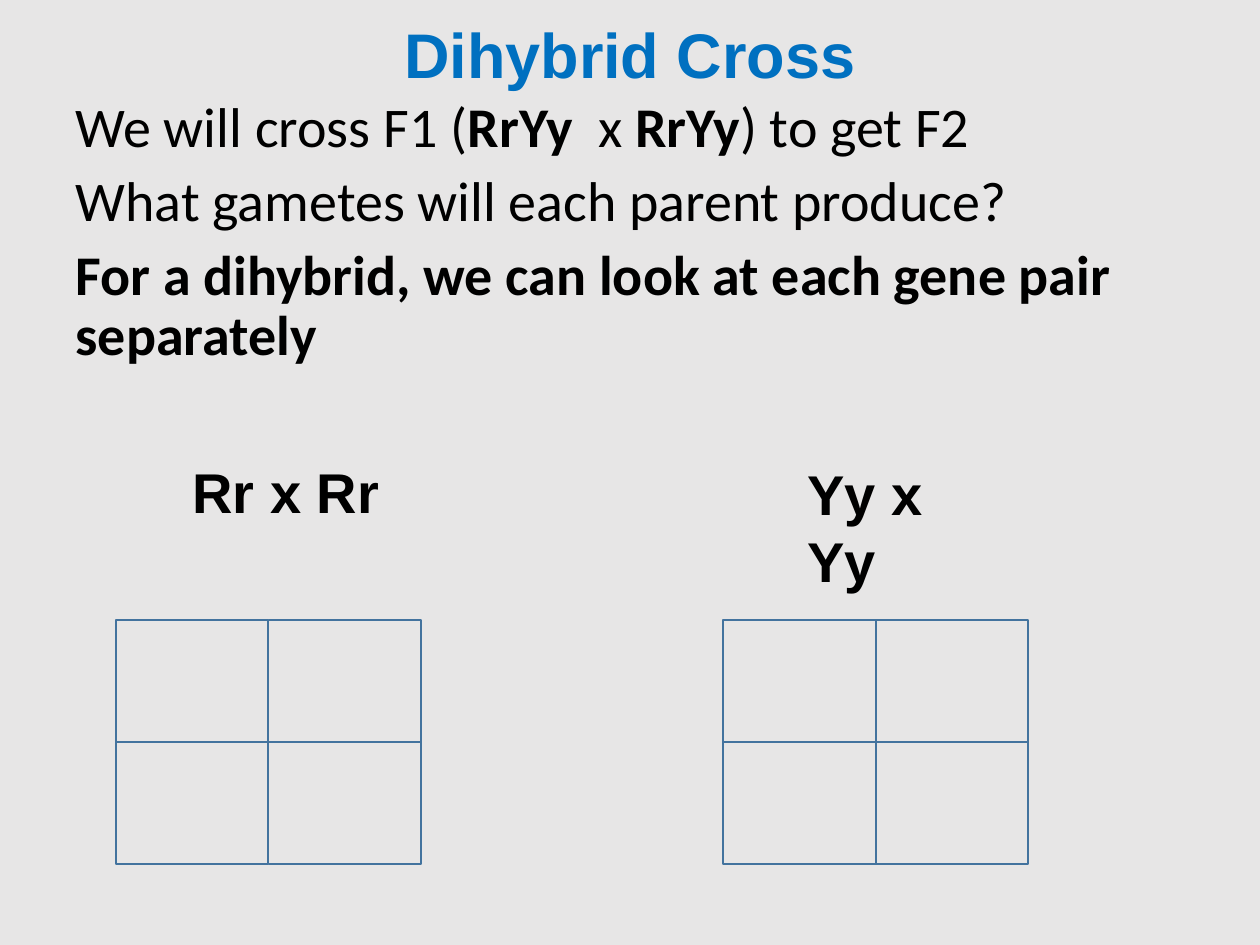
"""Build a slide that splits a dihybrid cross into two Punnett squares."""
import pptx
import pptx.dml.color
import pptx.enum.shapes
import pptx.enum.text
import pptx.oxml
import pptx.util

Inches = pptx.util.Inches
Pt = pptx.util.Pt
RGB = pptx.dml.color.RGBColor.from_string
COLORS = {"back": "E7E6E6", "text": "000000", "title": "0070C0", "grid": "43739E"}


def write(para, text, font="Arial", size=32, bold=True, color="text"):
    run = para.add_run()
    run.text = text
    run.font.name = font
    run.font.size = Pt(size)
    run.font.bold = bold
    run.font.color.rgb = RGB(COLORS[color])


def place(shape, left, top, width, height):
    shape.left, shape.top = Inches(left), Inches(top)
    shape.width, shape.height = Inches(width), Inches(height)
    frame = shape.text_frame
    frame.word_wrap = True
    frame.auto_size = pptx.enum.text.MSO_AUTO_SIZE.NONE
    frame.vertical_anchor = pptx.enum.text.MSO_ANCHOR.TOP
    return frame


deck = pptx.Presentation()
deck.slide_width, deck.slide_height = Inches(10), Inches(7.5)
slide = deck.slides.add_slide(deck.slide_layouts[1])
slide.background.fill.solid()
slide.background.fill.fore_color.rgb = RGB(COLORS["back"])

title = place(slide.shapes.title, 0.5, 0.02, 9, 0.97)
title.margin_top = Inches(0.1)
title.paragraphs[0].alignment = pptx.enum.text.PP_ALIGN.CENTER
write(title.paragraphs[0], "Dihybrid Cross", size=36, color="title")

body = place(slide.placeholders[1], 0.5, 0.74, 9.5, 1.08)
lines = [
    [("We will cross F1 (", False), ("RrYy", True), ("  x ", False),
     ("RrYy", True), (") to get F2", False)],
    [("What gametes will each parent produce?", False)],
    [("For a dihybrid, we can look at each gene pair separately", True)],
]
for i, line in enumerate(lines):
    para = body.add_paragraph() if i else body.paragraphs[0]
    para.line_spacing = 0.9
    para.space_before = Pt(7.5)
    props = para._p.get_or_add_pPr()
    props.set("marL", "0")
    props.set("indent", "0")
    pptx.oxml.ns.qn("a:buNone")
    props.append(pptx.oxml.xmlchemy.OxmlElement("a:buNone"))
    for text, bold in line:
        write(para, text, font="Calibri", bold=bold)

wide, high = 1.21, 0.97
crosses = [("Rr x Rr", 1.43, 3.58, 1.7, 0.92), ("Yy x Yy", 6.31, 3.6, 1.47, 5.74)]
for text, left, top, width, edge in crosses:
    box = slide.shapes.add_textbox(0, 0, 0, 0)
    label = place(box, left, top, width, 0.64)
    write(label.paragraphs[0], text)
    group = slide.shapes.add_group_shape()
    for row in range(2):
        for col in range(2):
            cell = group.shapes.add_shape(
                pptx.enum.shapes.MSO_SHAPE.RECTANGLE,
                Inches(edge + col * wide), Inches(4.92 + row * high),
                Inches(wide), Inches(high))
            cell.shadow.inherit = False
            cell.fill.background()
            cell.line.color.rgb = RGB(COLORS["grid"])
            cell.line.width = Pt(1)

deck.save("out.pptx")
